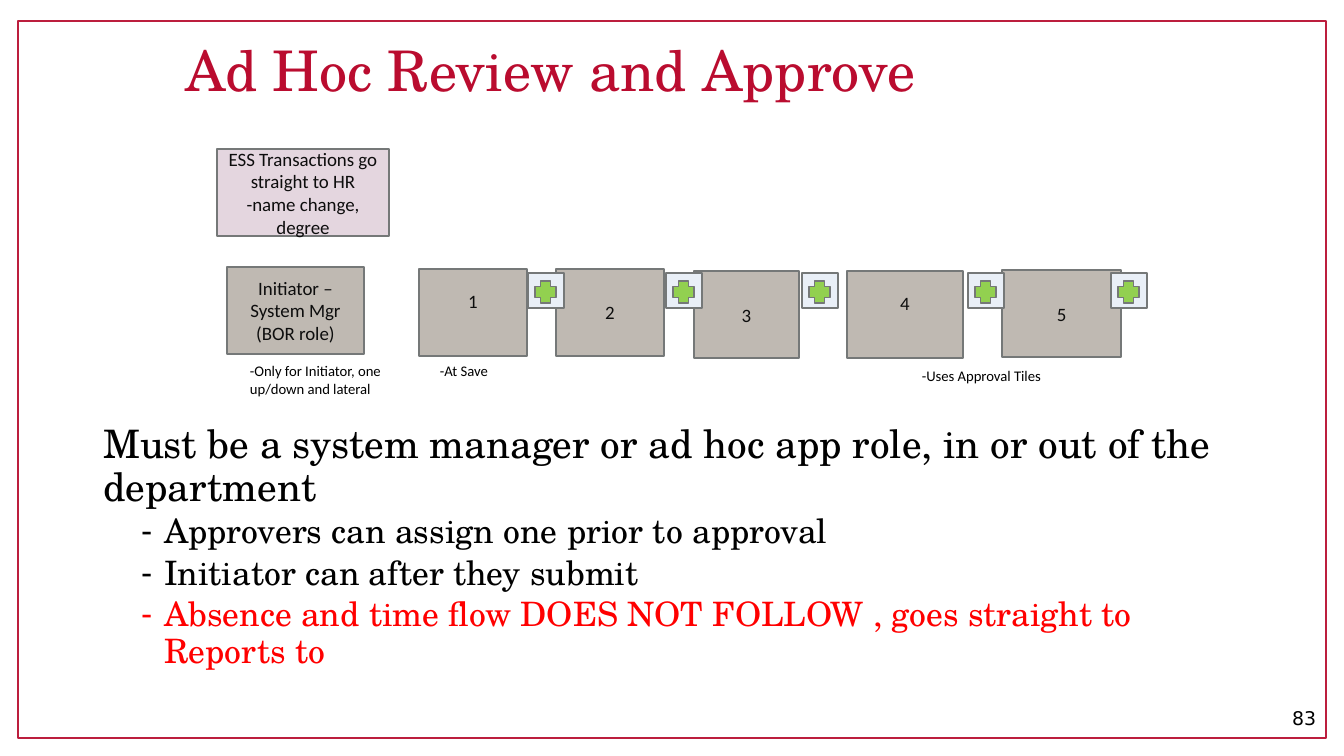
import pptx
import pptx.util
import pptx.dml.color
import pptx.enum.shapes
import pptx.enum.text
import pptx.oxml.ns
import lxml.etree
from dataclasses import dataclass

TITLE = "Ad Hoc Review and Approve"
REQUIREMENT = "Must be a system manager or ad hoc app role, in or out of the department"
RULES = [
    ("Approvers can assign one prior to approval", "000000"),
    ("Initiator can after they submit", "000000"),
    ("Absence and time flow DOES NOT FOLLOW , goes straight to Reports to", "FF0000"),
]
PAGE_NUMBER = "83"
EMPLOYEE_LINES = ["ESS Transactions go straight to HR", "-name change, degree"]
INITIATOR_LINES = ["Initiator – System Mgr (BOR role)"]
STEPS = [
    ("1", 419, 269, 108, 28),
    ("2", 556, 269, 108, 5),
    ("3", 694, 271, 105, 5),
    ("4", 847, 271, 116, 28),
    ("5", 1002, 270, 119, 5),
]
NOTES = [
    ("-Only for Initiator, one up/down and lateral", 240, 357, 64),
    ("-At Save", 430, 357, 28),
    ("-Uses Approval Tiles", 912, 362, 28),
]
PLUS_TILE_LEFTS = [528, 666, 802, 968, 1111]
PLUS_TILE_TOP = 273
BOX_HEIGHT = 87
NOTE_WIDTH = 153


@dataclass(frozen=True)
class Theme:
    heading_font: str = "TeX Gyre Schola"
    label_font: str = "Calibri"
    number_font: str = "DejaVu Sans"
    frame: str = "BC1E3E"
    title: str = "BA0C2F"
    text: str = "000000"
    label: str = "0D0D0D"
    step: str = "BFB9B2"
    employee: str = "E4D6DF"
    tile: str = "E9EFF7"
    plus: str = "92D050"
    outline: str = "757878"
    title_size: float = 40
    body_size: float = 28
    rule_size: float = 24
    label_size: float = 13.5
    note_size: float = 10.5


THEME = Theme()
SHAPE = pptx.enum.shapes.MSO_SHAPE
ALIGN = pptx.enum.text.PP_ALIGN
ANCHOR = pptx.enum.text.MSO_ANCHOR
Pt = pptx.util.Pt


def px(length):
    return round(length * 914400 / 100.8)


def color(value):
    return pptx.dml.color.RGBColor.from_string(value)


def place(shape, left, top, width, height):
    shape.left, shape.top, shape.width, shape.height = map(px, (left, top, width, height))


def style(paragraph, font, size, value, align=ALIGN.LEFT):
    paragraph.alignment = align
    paragraph.font.name = font
    paragraph.font.size = Pt(size)
    paragraph.font.color.rgb = color(value)


def add_shape(shapes, kind, area, fill, line=THEME.outline, width=1):
    shape = shapes.add_shape(kind, *map(px, area))
    shape.shadow.inherit = False
    if fill:
        shape.fill.solid()
        shape.fill.fore_color.rgb = color(fill)
    else:
        shape.fill.background()
    shape.line.color.rgb = color(line)
    shape.line.width = Pt(width)
    return shape


def add_box(shapes, lines, area, fill, bottom_inset=5):
    frame = add_shape(shapes, SHAPE.RECTANGLE, area, fill).text_frame
    frame.word_wrap = True
    frame.vertical_anchor = ANCHOR.MIDDLE
    frame.margin_bottom = px(bottom_inset)
    frame.text = "\n".join(lines)
    for paragraph in frame.paragraphs:
        style(paragraph, THEME.label_font, THEME.label_size, THEME.label, ALIGN.CENTER)


def add_text(shapes, text, area, font, size, align=ALIGN.LEFT, anchor=ANCHOR.TOP):
    frame = shapes.add_textbox(*map(px, area)).text_frame
    frame.word_wrap = True
    frame.vertical_anchor = anchor
    frame.text = text
    style(frame.paragraphs[0], font, size, THEME.text, align)


def set_bullet(paragraph, character, margin, indent):
    properties = paragraph._p.get_or_add_pPr()
    properties.set("marL", str(px(margin)))
    properties.set("indent", str(px(indent)))
    tag = "a:buChar" if character else "a:buNone"
    bullet = lxml.etree.SubElement(properties, pptx.oxml.ns.qn(tag))
    if character:
        bullet.set("char", character)


def fill_title(title):
    place(title, 175, 26, 1151, 94)
    frame = title.text_frame
    frame.auto_size = pptx.enum.text.MSO_AUTO_SIZE.NONE
    frame.vertical_anchor = ANCHOR.MIDDLE
    frame.text = TITLE
    frame.paragraphs[0].line_spacing = 0.9
    style(frame.paragraphs[0], THEME.heading_font, THEME.title_size, THEME.title)


def fill_body(body):
    place(body, 93, 420, 1159, 279)
    frame = body.text_frame
    frame.auto_size = pptx.enum.text.MSO_AUTO_SIZE.NONE
    frame.text = REQUIREMENT
    requirement = frame.paragraphs[0]
    set_bullet(requirement, None, 0, 0)
    requirement.line_spacing = 0.9
    requirement.space_before = Pt(0)
    style(requirement, THEME.heading_font, THEME.body_size, THEME.text)
    for text, value in RULES:
        paragraph = frame.add_paragraph()
        paragraph.text = text
        paragraph.level = 1
        set_bullet(paragraph, "-", 61, -23)
        paragraph.line_spacing = 0.9
        paragraph.space_before = Pt(3.7)
        style(paragraph, THEME.heading_font, THEME.rule_size, value)


def main():
    presentation = pptx.Presentation()
    presentation.slide_width, presentation.slide_height = px(1344), px(756)
    slide = presentation.slides.add_slide(presentation.slide_layouts[1])
    shapes = slide.shapes
    fill_title(shapes.title)
    fill_body(slide.placeholders[1])
    add_shape(shapes, SHAPE.RECTANGLE, (18, 21, 1308, 717), None, THEME.frame, 2)
    add_text(shapes, PAGE_NUMBER, (1024, 698, 302, 40), THEME.number_font,
             THEME.label_size, ALIGN.RIGHT, ANCHOR.MIDDLE)

    add_box(shapes, EMPLOYEE_LINES, (217, 149, 172, BOX_HEIGHT), THEME.employee)
    add_box(shapes, INITIATOR_LINES, (227, 267, 137, BOX_HEIGHT), THEME.step)
    for label, left, top, width, bottom_inset in STEPS:
        add_box(shapes, [label], (left, top, width, BOX_HEIGHT), THEME.step, bottom_inset)
    for text, left, top, height in NOTES:
        add_text(shapes, text, (left, top, NOTE_WIDTH, height), THEME.label_font, THEME.note_size)
    for left in PLUS_TILE_LEFTS:
        tile = shapes.add_group_shape().shapes
        add_shape(tile, SHAPE.RECTANGLE, (left, PLUS_TILE_TOP, 36, 35), THEME.tile)
        add_shape(tile, SHAPE.CROSS, (left + 7, PLUS_TILE_TOP + 8, 21, 22), THEME.plus)
    presentation.save("out.pptx")


if __name__ == "__main__":
    main()
